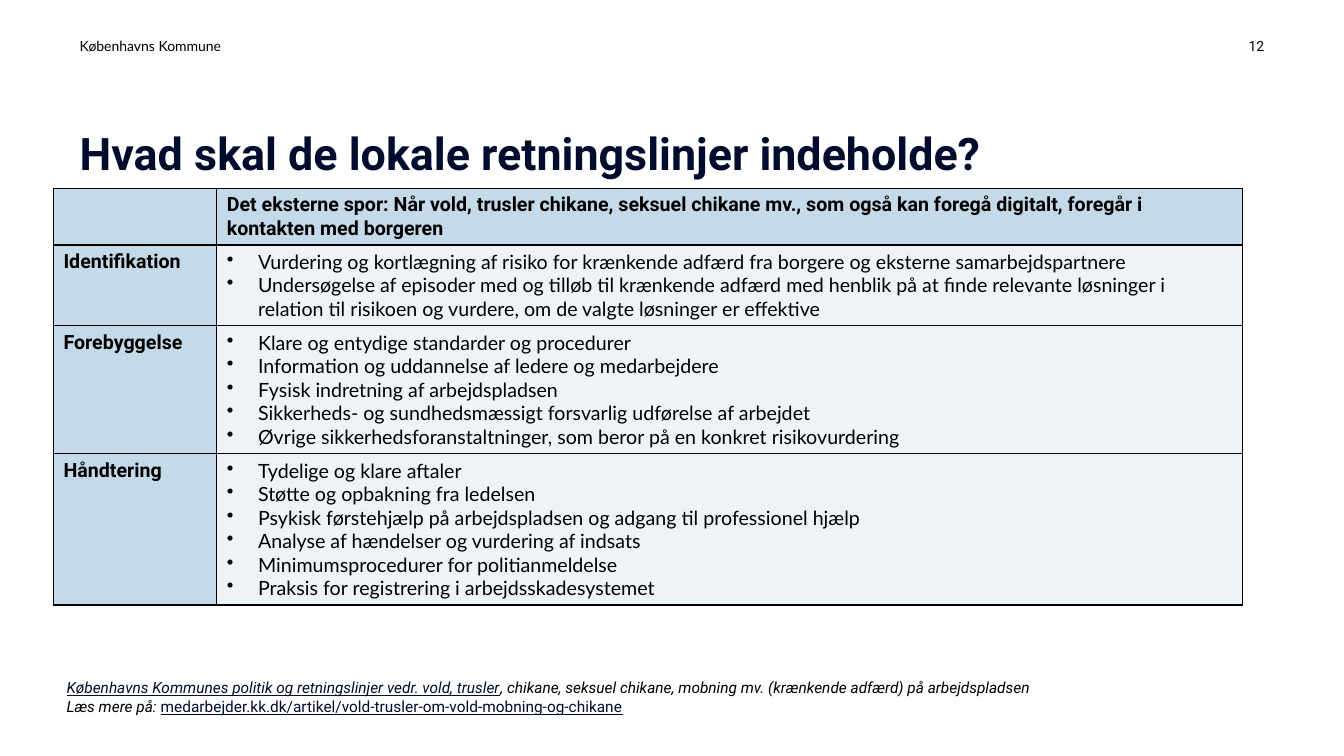
from lxml.etree import SubElement
from pptx import Presentation
from pptx.dml.color import RGBColor
from pptx.enum.text import MSO_ANCHOR as Anchor, MSO_AUTO_SIZE as AutoSize, PP_ALIGN as Align
from pptx.oxml import parse_xml
from pptx.oxml.ns import nsdecls, qn
from pptx.util import Inches, Pt


def color(value):
    return RGBColor.from_string(value)


class SlideBuilder:
    HEADING, BODY = "Roboto", "Lato"
    NAVY, BLACK = "000C2E", "000000"
    BLUE, PALE = "C5DAE8", "EDF3F7"

    def __init__(self, slide):
        self.slide = slide

    def style(self, r, size, font, fill=BLACK, bold=False, italic=False, underline=False):
        f = r.font
        f.size, f.name, f.bold = Pt(size), font, bold
        f.italic, f.underline = italic, underline
        f.color.rgb = color(fill)

    def frame(self, sp, box, anchor):
        sp.left, sp.top, sp.width, sp.height = [Inches(v) for v in box]
        tf = sp.text_frame
        tf.word_wrap, tf.auto_size, tf.vertical_anchor = True, AutoSize.NONE, anchor
        tf.margin_left = tf.margin_top = tf.margin_right = tf.margin_bottom = 0
        return tf

    def label(self, text, box, font, align=Align.LEFT):
        sp = self.slide.shapes.add_textbox(*[Inches(v) for v in box])
        p = self.frame(sp, box, Anchor.BOTTOM).paragraphs[0]
        p.text, p.alignment = text, align
        self.style(p.runs[0], 10, font)

    def title(self, text, box):
        p = self.frame(self.slide.shapes.title, box, Anchor.BOTTOM).paragraphs[0]
        p.text, p.alignment, p.line_spacing = text, Align.LEFT, 0.83
        self.style(p.runs[0], 32, self.HEADING, self.NAVY, bold=True)

    def source_note(self, lines, box):
        p = self.frame(self.slide.placeholders[1], box, Anchor.TOP).paragraphs[0]
        p.space_before, p.space_after = Pt(0), Pt(6)
        self.indent(p, 0, "buNone")
        for i, line in enumerate(lines):
            if i:
                p.add_line_break()
            for text, fill, italic, underline in line:
                r = p.add_run()
                r.text = text
                self.style(r, 11, self.HEADING, fill, italic=italic, underline=underline)

    def indent(self, p, width, bullet, **attrs):
        pPr = p._p.get_or_add_pPr()
        pPr.set("marL", str(Inches(width)))
        pPr.set("indent", str(-Inches(width)))
        SubElement(pPr, qn("a:" + bullet), **attrs)

    def borders(self, cell):
        tcPr = cell._tc.get_or_add_tcPr()
        for i, side in enumerate("LRTB"):
            tcPr.insert(i, parse_xml(
                f'<a:ln{side} {nsdecls("a")} w="{Pt(1)}"><a:solidFill>'
                f'<a:srgbClr val="{self.BLACK}"/></a:solidFill></a:ln{side}>'))

    def cell(self, cell, lines, fill, bulleted=False):
        cell.fill.solid()
        cell.fill.fore_color.rgb = color(fill)
        self.borders(cell)
        cell.text_frame.text = "\n".join(lines)
        for p in cell.text_frame.paragraphs:
            if bulleted:
                self.indent(p, 0.31, "buChar", char="•")
            for r in p.runs:
                self.style(r, 14, self.BODY if bulleted else self.HEADING, bold=not bulleted)

    def table(self, heading, sections, box, widths, heights):
        table = self.slide.shapes.add_table(
            len(heights), len(widths), *[Inches(v) for v in box]).table
        table.first_row = table.horz_banding = False
        for column, width in zip(table.columns, widths):
            column.width = Inches(width)
        for row, height in zip(table.rows, heights):
            row.height = Inches(height)
        self.cell(table.cell(0, 0), [""], self.BLUE)
        self.cell(table.cell(0, 1), [heading], self.BLUE)
        for i, (name, points) in enumerate(sections, 1):
            self.cell(table.cell(i, 0), [name], self.BLUE)
            self.cell(table.cell(i, 1), points, self.PALE, bulleted=True)


HEADING = ("Det eksterne spor: Når vold, trusler chikane, seksuel chikane mv., "
           "som også kan foregå digitalt, foregår i kontakten med borgeren")
SECTIONS = [
    ("Identifikation", [
        "Vurdering og kortlægning af risiko for krænkende adfærd fra borgere og eksterne samarbejdspartnere",
        "Undersøgelse af episoder med og tilløb til krænkende adfærd med henblik på at finde relevante "
        "løsninger i relation til risikoen og vurdere, om de valgte løsninger er effektive",
    ]),
    ("Forebyggelse", [
        "Klare og entydige standarder og procedurer",
        "Information og uddannelse af ledere og medarbejdere",
        "Fysisk indretning af arbejdspladsen",
        "Sikkerheds- og sundhedsmæssigt forsvarlig udførelse af arbejdet",
        "Øvrige sikkerhedsforanstaltninger, som beror på en konkret risikovurdering",
    ]),
    ("Håndtering", [
        "Tydelige og klare aftaler",
        "Støtte og opbakning fra ledelsen",
        "Psykisk førstehjælp på arbejdspladsen og adgang til professionel hjælp",
        "Analyse af hændelser og vurdering af indsats",
        "Minimumsprocedurer for politianmeldelse",
        "Praksis for registrering i arbejdsskadesystemet",
    ]),
]


def main():
    prs = Presentation()
    prs.slide_width, prs.slide_height = Inches(13.33), Inches(7.5)
    s = SlideBuilder(prs.slides.add_slide(prs.slide_layouts[1]))
    s.label("Københavns Kommune", (0.79, 0.34, 3.85, 0.2), s.BODY)
    s.label("12", (12.11, 0.34, 0.43, 0.2), s.HEADING, Align.RIGHT)
    s.title("Hvad skal de lokale retningslinjer indeholde?", (0.79, 1.31, 11.76, 0.47))
    s.table(HEADING, SECTIONS, (0.53, 1.87, 11.79, 4.12), (1.62, 10.17), (0.55, 0.8, 1.27, 1.5))
    s.source_note([
        [("Københavns Kommunes politik og retningslinjer vedr. vold, trusler", s.NAVY, True, True),
         (", chikane, seksuel chikane, mobning mv. (krænkende adfærd) på arbejdspladsen",
          s.BLACK, True, False)],
        [("Læs mere på: ", s.BLACK, True, False),
         ("medarbejder.kk.dk/artikel/vold-trusler-om-vold-mobning-og-chikane", s.NAVY, False, True)],
    ], (0.66, 6.73, 11.76, 0.34))
    prs.save("out.pptx")


if __name__ == "__main__":
    main()
